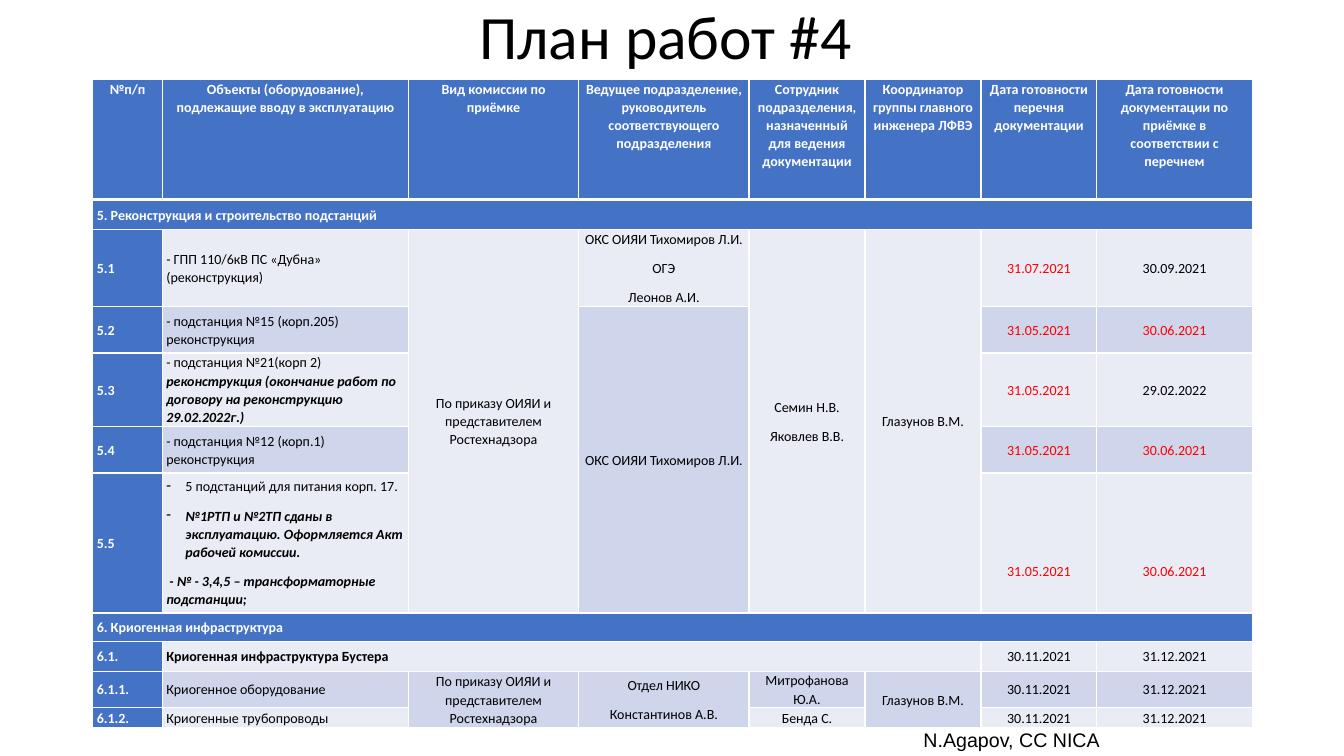
from dataclasses import dataclass

from lxml.etree import SubElement
from pptx import Presentation
from pptx.dml.color import RGBColor
from pptx.enum.text import MSO_ANCHOR, PP_ALIGN
from pptx.oxml.ns import qn
from pptx.slide import Slide
from pptx.table import Table, _Cell
from pptx.text.text import _Paragraph
from pptx.util import Inches, Pt


@dataclass(frozen=True)
class Theme:
    blue: str = "4472C4"
    light: str = "E9EBF5"
    dark: str = "CFD5EA"
    white: str = "FFFFFF"
    black: str = "000000"
    red: str = "FF0000"
    font: str = "Calibri"
    footer_font: str = "Arial"
    title_size: float = 44
    table_size: float = 10
    footer_size: float = 14


@dataclass(frozen=True)
class Line:
    text: str = ""
    emphasis: str = ""  # bold italic ending of the line
    bullet: bool = False


@dataclass(frozen=True)
class Entry:
    row: int
    column: int
    lines: tuple[Line, ...]
    row_span: int = 1
    column_span: int = 1
    overdue: bool = False
    bold: bool = False
    top_margin: float = 0


THEME = Theme()
COLUMN_WIDTHS = (0.69, 2.44, 1.69, 1.69, 1.15, 1.15, 1.15, 1.54)
ROW_HEIGHTS = (1.19, 0.3, 0.76, 0.46, 0.73, 0.46, 1.39, 0.28, 0.3, 0.36, 0.2)
HEADERS = (
    "№п/п",
    "Объекты (оборудование), подлежащие вводу в эксплуатацию",
    "Вид комиссии по приёмке",
    "Ведущее подразделение, руководитель соответствующего подразделения",
    "Сотрудник подразделения, назначенный для ведения документации",
    "Координатор группы главного инженера ЛФВЭ",
    "Дата готовности перечня документации",
    "Дата готовности документации по приёмке в соответствии с перечнем",
)
SECTIONS = {1: "5. Реконструкция и строительство подстанций",
            7: "6. Криогенная инфраструктура"}
NUMBERS = {2: "5.1", 3: "5.2", 4: "5.3", 5: "5.4", 6: "5.5",
           8: "6.1.", 9: "6.1.1.", 10: "6.1.2."}
# Row: (list ready, list overdue, documents ready, documents overdue)
DATES = {
    2: ("31.07.2021", True, "30.09.2021", False),
    3: ("31.05.2021", True, "30.06.2021", True),
    4: ("31.05.2021", True, "29.02.2022", False),
    5: ("31.05.2021", True, "30.06.2021", True),
    6: ("31.05.2021", True, "30.06.2021", True),
    8: ("30.11.2021", False, "31.12.2021", False),
    9: ("30.11.2021", False, "31.12.2021", False),
    10: ("30.11.2021", False, "31.12.2021", False),
}
LOWERED_DATES = {6: 0.56}
COMMISSION = (Line("По приказу ОИЯИ и представителем Ростехнадзора"),)
CONSTRUCTION = Line("ОКС ОИЯИ Тихомиров Л.И.")
COORDINATOR = (Line("Глазунов В.М."),)

DETAILS = (
    # Objects
    Entry(2, 1, (Line("- ГПП 110/6кВ ПС «Дубна» (реконструкция)"),)),
    Entry(3, 1, (Line("- подстанция №15 (корп.205) реконструкция"),)),
    Entry(4, 1, (Line("- подстанция №21(корп 2) ",
                      "реконструкция (окончание работ по договору на реконструкцию 29.02.2022г.)"),)),
    Entry(5, 1, (Line("- подстанция №12 (корп.1) реконструкция"),)),
    Entry(6, 1, (
        Line("5 подстанций для питания корп. 17.", bullet=True),
        Line(emphasis="№1РТП и №2ТП сданы в эксплуатацию. Оформляется Акт рабочей комиссии.",
             bullet=True),
        Line(" ", "- № - 3,4,5 – трансформаторные подстанции;"),
    )),
    Entry(8, 1, (Line("Криогенная инфраструктура Бустера"),), column_span=5, bold=True),
    Entry(9, 1, (Line("Криогенное оборудование"),)),
    Entry(10, 1, (Line("Криогенные трубопроводы"),)),
    # Commissions, departments and people
    Entry(2, 2, COMMISSION, row_span=5),
    Entry(9, 2, COMMISSION, row_span=2),
    Entry(2, 3, (CONSTRUCTION, Line("ОГЭ"), Line("Леонов А.И."))),
    Entry(3, 3, (CONSTRUCTION,), row_span=4),
    Entry(9, 3, (Line("Отдел НИКО"), Line("Константинов А.В.")), row_span=2),
    Entry(2, 4, (Line("Семин Н.В."), Line("Яковлев В.В.")), row_span=5),
    Entry(9, 4, (Line("Митрофанова Ю.А."),)),
    Entry(10, 4, (Line("Бенда С."),)),
    Entry(2, 5, COORDINATOR, row_span=5),
    Entry(9, 5, COORDINATOR, row_span=2),
)


def plan_entries() -> list[Entry]:
    entries = [Entry(0, column, (Line(text),)) for column, text in enumerate(HEADERS)]
    entries += [Entry(row, 0, (Line(text),), column_span=len(HEADERS))
                for row, text in SECTIONS.items()]
    entries += [Entry(row, 0, (Line(text),)) for row, text in NUMBERS.items()]
    for row, (list_date, list_late, document_date, document_late) in DATES.items():
        for column, date, late in ((6, list_date, list_late), (7, document_date, document_late)):
            entries.append(Entry(row, column, (Line(date),), overdue=late,
                                 top_margin=LOWERED_DATES.get(row, 0)))
    return entries + list(DETAILS)


def is_blue(row: int, column: int) -> bool:
    return row == 0 or column == 0 or row in SECTIONS


def set_font(paragraph: _Paragraph, size: float, color: str,
             name: str = THEME.font, bold: bool = False) -> None:
    paragraph.font.name = name
    paragraph.font.size = Pt(size)
    paragraph.font.bold = bold
    paragraph.font.color.rgb = RGBColor.from_string(color)


def format_cell(cell: _Cell, row: int, column: int) -> None:
    properties = cell._tc.get_or_add_tcPr()
    for side in ("lnL", "lnR", "lnT", "lnB"):
        width = 3 if row == 0 and side == "lnB" else 1
        border = SubElement(properties, qn(f"a:{side}"), w=str(Pt(width)))
        fill = SubElement(border, qn("a:solidFill"))
        SubElement(fill, qn("a:srgbClr"), val=THEME.white)
    band = THEME.dark if row % 2 else THEME.light
    cell.fill.solid()
    cell.fill.fore_color.rgb = RGBColor.from_string(THEME.blue if is_blue(row, column) else band)
    cell.margin_left = cell.margin_right = Inches(0.06 if row == 0 else 0.04)
    cell.margin_top = cell.margin_bottom = 0
    cell.vertical_anchor = MSO_ANCHOR.TOP if row == 0 else MSO_ANCHOR.MIDDLE
    set_font(cell.text_frame.paragraphs[0], THEME.table_size, THEME.black)


def write_entry(table: Table, entry: Entry) -> None:
    cell = table.cell(entry.row, entry.column)
    if entry.row_span > 1 or entry.column_span > 1:
        cell.merge(table.cell(entry.row + entry.row_span - 1,
                              entry.column + entry.column_span - 1))
    cell.margin_top = Inches(entry.top_margin)
    blue = is_blue(entry.row, entry.column)
    color = THEME.white if blue else THEME.red if entry.overdue else THEME.black
    centred = entry.row == 0 or entry.column > 1
    frame = cell.text_frame
    for index, line in enumerate(entry.lines):
        paragraph = frame.add_paragraph() if index else frame.paragraphs[0]
        paragraph.alignment = PP_ALIGN.CENTER if centred else PP_ALIGN.LEFT
        paragraph.line_spacing = 1.07
        paragraph.space_after = Pt(8)
        if line.bullet:
            properties = paragraph._p.get_or_add_pPr()
            properties.set("marL", str(Inches(0.19)))
            properties.set("indent", str(-Inches(0.19)))
            SubElement(properties, qn("a:buChar"), char="-")
        set_font(paragraph, THEME.table_size, color, bold=blue or entry.bold)
        if line.text:
            paragraph.add_run().text = line.text
        if line.emphasis:
            run = paragraph.add_run()
            run.text = line.emphasis
            run.font.bold = run.font.italic = True


def add_title(slide: Slide) -> None:
    title = slide.shapes.title
    title.left, title.top, title.width, title.height = map(Inches, (0.92, 0.01, 11.5, 0.77))
    title.text_frame.text = "План работ #4 "
    title.text_frame.vertical_anchor = MSO_ANCHOR.MIDDLE
    paragraph = title.text_frame.paragraphs[0]
    paragraph.alignment = PP_ALIGN.CENTER
    paragraph.line_spacing = 0.9
    set_font(paragraph, THEME.title_size, THEME.black)


def add_plan_table(slide: Slide) -> None:
    table = slide.shapes.add_table(len(ROW_HEIGHTS), len(COLUMN_WIDTHS), Inches(0.92), Inches(0.79),
                                   Inches(sum(COLUMN_WIDTHS)), Inches(sum(ROW_HEIGHTS))).table
    for column, width in zip(table.columns, COLUMN_WIDTHS):
        column.width = Inches(width)
    for row, height in enumerate(ROW_HEIGHTS):
        table.rows[row].height = Inches(height)
        for column in range(len(COLUMN_WIDTHS)):
            format_cell(table.cell(row, column), row, column)
    for entry in plan_entries():
        write_entry(table, entry)


def add_footer(slide: Slide) -> None:
    frame = slide.shapes.add_textbox(Inches(8.45), Inches(6.98), Inches(3.17), Inches(0.52)).text_frame
    frame.word_wrap = True
    frame.vertical_anchor = MSO_ANCHOR.BOTTOM
    frame.text = "N.Agapov, CC NICA"
    frame.paragraphs[0].alignment = PP_ALIGN.CENTER
    set_font(frame.paragraphs[0], THEME.footer_size, THEME.black, THEME.footer_font)


def main() -> None:
    presentation = Presentation()
    presentation.slide_width, presentation.slide_height = Inches(13.33), Inches(7.5)
    slide = presentation.slides.add_slide(presentation.slide_layouts[5])
    add_plan_table(slide)
    add_title(slide)
    add_footer(slide)
    presentation.save("out.pptx")


if __name__ == "__main__":
    main()
